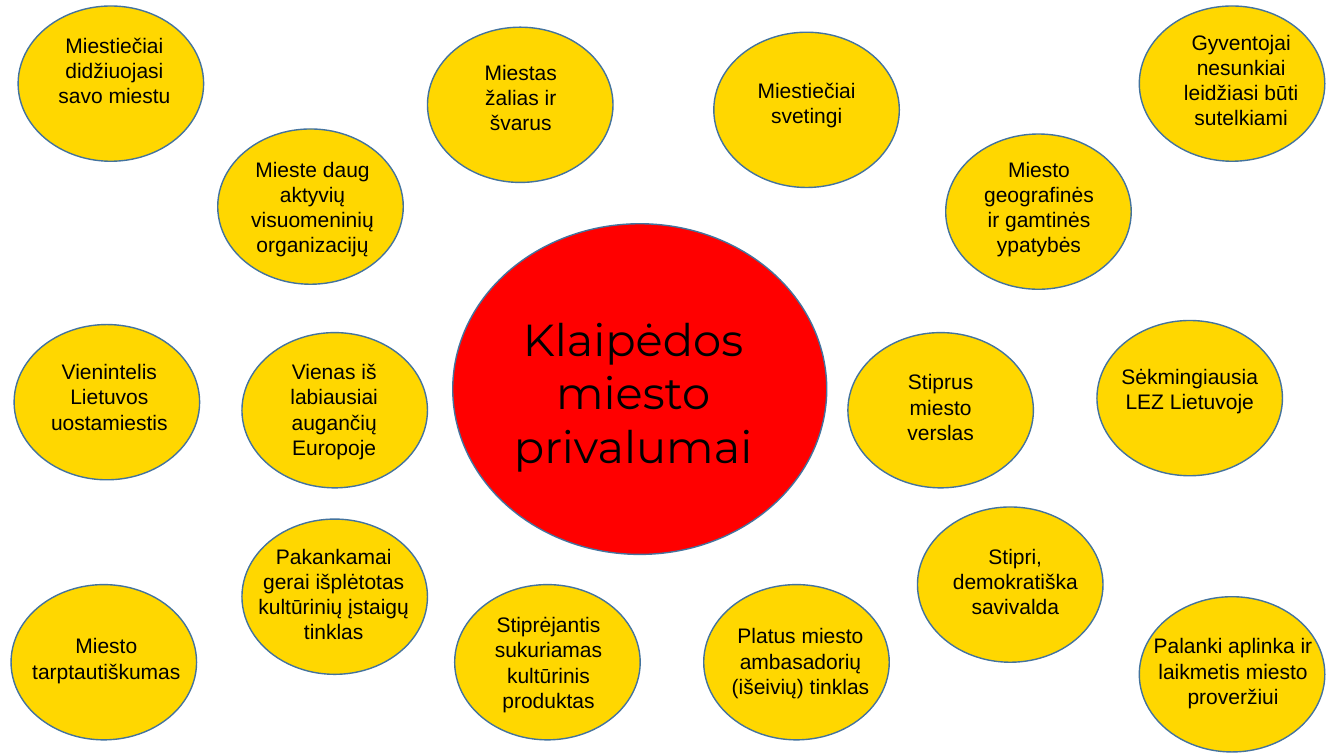
from dataclasses import dataclass

from pptx import Presentation
from pptx.dml.color import RGBColor
from pptx.enum.shapes import MSO_SHAPE
from pptx.enum.text import MSO_AUTO_SIZE, PP_ALIGN
from pptx.util import Pt

OVAL = MSO_SHAPE.OVAL
CENTER = PP_ALIGN.CENTER
GROW = MSO_AUTO_SIZE.SHAPE_TO_FIT_TEXT
PX = 9144  # EMU per px, 100 px to the inch
BLANK = 6


@dataclass(frozen=True)
class Theme:
    hub: RGBColor = RGBColor(0xFF, 0x00, 0x00)
    bubble: RGBColor = RGBColor(0xFF, 0xD7, 0x00)
    outline: RGBColor = RGBColor(0x43, 0x73, 0x9E)
    text: RGBColor = RGBColor(0x00, 0x00, 0x00)
    hub_font: str = "Montserrat"
    bubble_font: str = "Arial"
    hub_size: int = 32
    bubble_size: int = 15
    line: int = 1


THEME = Theme()
BUBBLE_W, BUBBLE_H = 184, 154

# Central circle: box, then label box relative to it
HUB_BOX = (449, 222, 371, 328)
HUB_LABEL = (38, 82, 282, 172)
HUB_TEXT = "Klaipėdos miesto privalumai"

# Bubble left and top, label box relative to the bubble, wording
ADVANTAGES = [
    (18, 6, (25, 21, 141, 111), "Miestiečiai didžiuojasi savo miestu"),
    (424, 27, (25, 27, 135, 111), "Miestas žalias ir švarus"),
    (708, 32, (21, 40, 142, 61), "Miestiečiai svetingi"),
    (1130, 6, (17, 18, 168, 136), "Gyventojai nesunkiai leidžiasi būti sutelkiami"),
    (216, 128, (14, 22, 160, 136), "Mieste daug aktyvių visuomeninių organizacijų"),
    (938, 133, (23, 17, 139, 136), "Miesto geografinės ir gamtinės ypatybės"),
    (14, 322, (18, 29, 153, 111), "Vienintelis Lietuvos uostamiestis"),
    (240, 330, (10, 21, 163, 136), "Vienas iš labiausiai augančių Europoje"),
    (841, 330, (30, 31, 124, 111), "Stiprus miesto verslas"),
    (1088, 318, (1, 38, 182, 86), "Sėkmingiausia LEZ Lietuvoje"),
    (11, 580, (-7, 43, 203, 91), "Miesto tarptautiškumas"),
    (240, 515, (-1, 19, 184, 136),
     "Pakankamai gerai išplėtotas kultūrinių įstaigų tinklas"),
    (451, 580, (17, 22, 152, 136), "Stiprėjantis sukuriamas kultūrinis produktas"),
    (698, 580, (8, 33, 176, 111), "Platus miesto ambasadorių (išeivių) tinklas"),
    (910, 503, (16, 31, 162, 111), "Stipri, demokratiška savivalda"),
    (1130, 592, (1, 31, 184, 86), "Palanki aplinka ir laikmetis miesto proveržiui"),
]


def emu(*lengths):
    return [n * PX for n in lengths]


def set_format(target, values):
    for name, value in values.items():
        setattr(target, name, value)


def add_circle(slide, box, label_box, text, fill, font):
    """Group an ellipse with its label, placed relative to the ellipse's box."""
    left, top, width, height = box
    dx, dy, label_w, label_h = label_box
    group = slide.shapes.add_group_shape()

    # Ellipse
    sp = group.shapes.add_shape(OVAL, *emu(left, top, width, height))
    sp.shadow.inherit = False
    sp.fill.solid()
    sp.fill.fore_color.rgb = fill
    sp.line.color.rgb = THEME.outline
    sp.line.width = Pt(THEME.line)

    # Label
    label = group.shapes.add_textbox(*emu(left + dx, top + dy, label_w, label_h))
    tf = label.text_frame
    set_format(tf, {"word_wrap": True, "auto_size": GROW})
    p = tf.paragraphs[0]
    p.alignment = CENTER
    r = p.add_run()
    r.text = text
    set_format(r.font, font)
    r.font.color.rgb = THEME.text


def add_hub(slide, box):
    font = {"name": THEME.hub_font, "size": Pt(THEME.hub_size)}
    add_circle(slide, box, HUB_LABEL, HUB_TEXT, THEME.hub, font)


def add_advantages(slide, advantages):
    font = {"name": THEME.bubble_font, "size": Pt(THEME.bubble_size)}
    for left, top, label_box, text in advantages:
        box = (left, top, BUBBLE_W, BUBBLE_H)
        add_circle(slide, box, label_box, text, THEME.bubble, font)


def main():
    prs = Presentation()
    prs.slide_width, prs.slide_height = emu(1333, 750)
    slide = prs.slides.add_slide(prs.slide_layouts[BLANK])
    add_hub(slide, HUB_BOX)
    add_advantages(slide, ADVANTAGES)
    prs.save("out.pptx")


if __name__ == "__main__":
    main()
